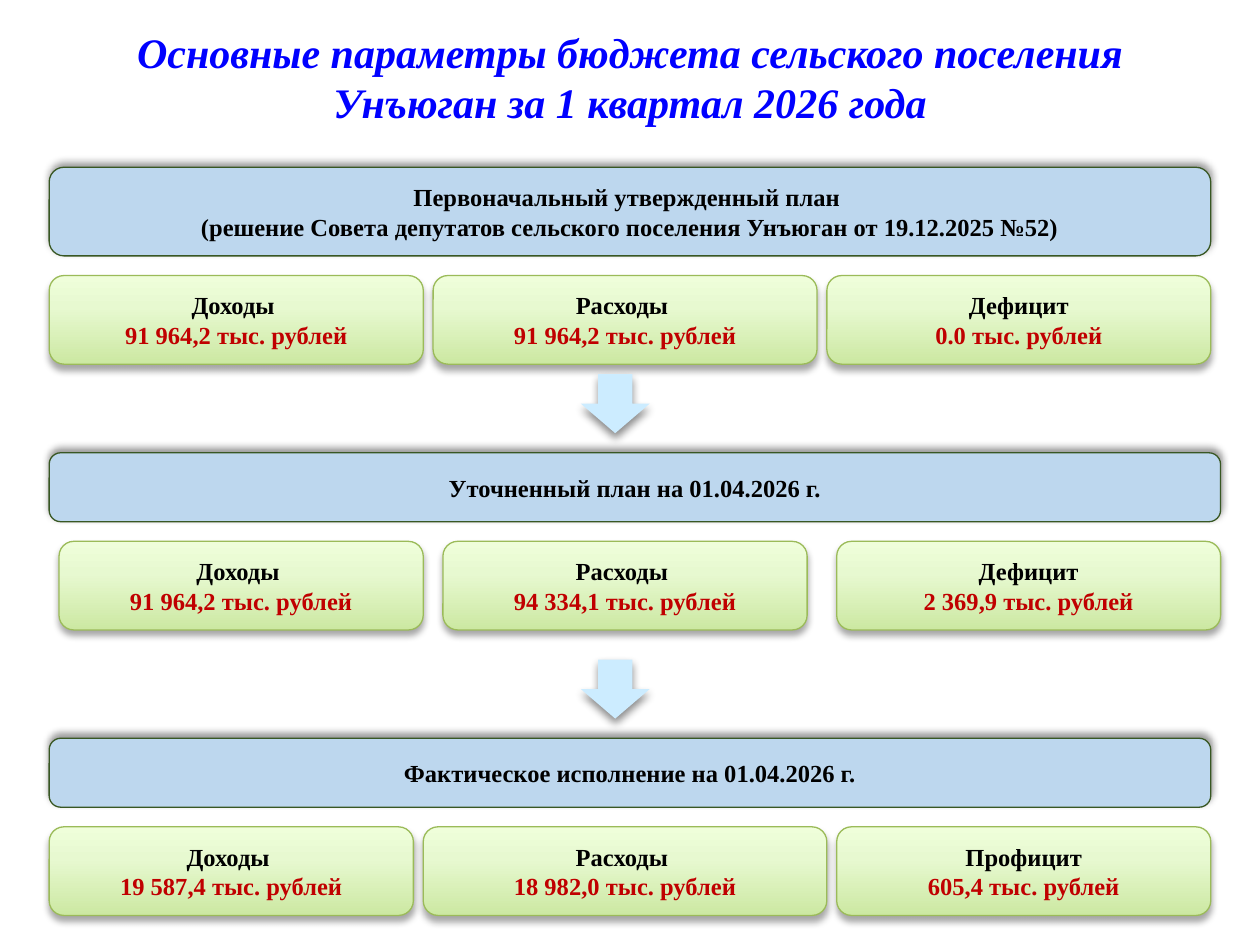
"""Build the slide with the main budget parameters of the settlement."""
from typing import NamedTuple

from lxml import etree
from pptx import Presentation
from pptx import util as u
from pptx.dml.color import RGBColor
from pptx.enum import shapes, text
from pptx.oxml import ns

FONT = "Times New Roman"
BLACK = RGBColor(0x00, 0x00, 0x00)
TITLE_BLUE = RGBColor(0x00, 0x00, 0xFF)
AMOUNT_RED = RGBColor(0xC0, 0x00, 0x00)
HEADER_FILL = RGBColor(0xBD, 0xD7, 0xEE)
HEADER_LINE = RGBColor(0x38, 0x57, 0x23)
CARD_LINE = RGBColor(0x9B, 0xBB, 0x59)
ARROW_FILL = RGBColor(0xCC, 0xEC, 0xFF)
CARD_STOPS = (
    (0, RGBColor(0xCC, 0xE8, 0xA2)),
    (64, RGBColor(0xE7, 0xF9, 0xD0)),
    (100, RGBColor(0xEF, 0xFE, 0xDA)),
)

WIDTH, HEIGHT = u.Inches(10), u.Inches(7.5)
COLUMNS, ROWS = 128, 96
CARD_ROWS = 9


class Area(NamedTuple):
    column: float
    row: float
    columns: float
    rows: float

    def lengths(self) -> tuple:
        cell_width, cell_height = WIDTH / COLUMNS, HEIGHT / ROWS
        return (
            u.Emu(round(self.column * cell_width)),
            u.Emu(round(self.row * cell_height)),
            u.Emu(round(self.columns * cell_width)),
            u.Emu(round(self.rows * cell_height)),
        )


class Shadow(NamedTuple):
    alpha: int
    blur: float
    distance: float
    direction: int


class Card(NamedTuple):
    column: int
    columns: int
    label: str
    amount: str


class Stage(NamedTuple):
    header: Area
    lines: tuple
    card_row: int
    cards: tuple


HEADER_SHADOW = Shadow(40, 4, 3, 270)
CARD_SHADOW = Shadow(35, 4, 3, 90)
ARROW_SHADOW = Shadow(45, 5, 3, 90)
TITLE_SHADOW = Shadow(43, 3, 3, 45)

TITLE = "Основные параметры бюджета сельского поселения Унъюган за 1 квартал 2026 года"
TITLE_AREA = Area(5, 2, 118, 13.3)
ARROWS = (Area(59, 38, 7, 6), Area(59, 67, 7, 6))
STAGES = (
    Stage(
        Area(5, 17, 118, 9),
        (
            "Первоначальный утвержденный план ",
            "(решение Совета депутатов сельского поселения Унъюган от 19.12.2025 №52)",
        ),
        28,
        (
            Card(5, 38, "Доходы ", "91 964,2 тыс. рублей"),
            Card(44, 39, "Расходы ", "91 964,2 тыс. рублей"),
            Card(84, 39, "Дефицит", "0.0 тыс. рублей"),
        ),
    ),
    Stage(
        Area(5, 46, 119, 7),
        ("Уточненный план на 01.04.2026 г.",),
        55,
        (
            Card(6, 37, "Доходы ", "91 964,2 тыс. рублей"),
            Card(45, 37, "Расходы ", "94 334,1 тыс. рублей"),
            Card(85, 39, "Дефицит", "2 369,9 тыс. рублей"),
        ),
    ),
    Stage(
        Area(5, 75, 118, 7),
        ("Фактическое исполнение на 01.04.2026 г.",),
        84,
        (
            Card(5, 37, "Доходы ", "19 587,4 тыс. рублей"),
            Card(43, 41, "Расходы ", "18 982,0 тыс. рублей"),
            Card(85, 38, "Профицит", "605,4 тыс. рублей"),
        ),
    ),
)


def add_element(parent, tag: str, **attributes):
    values = {name: str(value) for name, value in attributes.items()}
    return etree.SubElement(parent, ns.qn(tag), values)


def add_color(parent, color: RGBColor):
    return add_element(parent, "a:srgbClr", val=color)


def add_shadow(effects, shadow: Shadow) -> None:
    outer = add_element(
        effects,
        "a:outerShdw",
        blurRad=u.Pt(shadow.blur),
        dist=u.Pt(shadow.distance),
        dir=shadow.direction * 60000,
        algn="tl",
        rotWithShape=0,
    )
    add_element(add_color(outer, BLACK), "a:alpha", val=shadow.alpha * 1000)


def style_font(font, size: float, color: RGBColor) -> None:
    font.name, font.size, font.bold = FONT, u.Pt(size), True
    font.color.rgb = color


def add_block(slide, kind, area: Area, shadow: Shadow):
    shape = slide.shapes.add_shape(kind, *area.lengths())
    shape.shadow.inherit = False
    add_shadow(shape.element.spPr.find(ns.qn("a:effectLst")), shadow)
    return shape


def add_panel(slide, area: Area, shadow: Shadow, line: RGBColor, lines: list):
    shape = add_block(slide, shapes.MSO_SHAPE.ROUNDED_RECTANGLE, area, shadow)
    shape.line.color.rgb = line
    shape.line.width = u.Pt(0.75)
    frame = shape.text_frame
    frame.vertical_anchor = text.MSO_ANCHOR.MIDDLE
    for index, (words, color) in enumerate(lines):
        paragraph = frame.add_paragraph() if index else frame.paragraphs[0]
        paragraph.text = words
        paragraph.alignment = text.PP_ALIGN.CENTER
        style_font(paragraph.font, 14, color)
    return shape


def fill_card(shape) -> None:
    shape.fill.gradient()
    shape.fill.gradient_angle = 90
    stops = shape.element.spPr.find(ns.qn("a:gradFill")).find(ns.qn("a:gsLst"))
    for stop in list(stops):
        stops.remove(stop)
    for position, color in CARD_STOPS:
        add_color(add_element(stops, "a:gs", pos=position * 1000), color)


def add_stage(slide, stage: Stage) -> None:
    lines = [(words, BLACK) for words in stage.lines]
    header = add_panel(slide, stage.header, HEADER_SHADOW, HEADER_LINE, lines)
    header.fill.solid()
    header.fill.fore_color.rgb = HEADER_FILL
    for card in stage.cards:
        area = Area(card.column, stage.card_row, card.columns, CARD_ROWS)
        lines = [(card.label, BLACK), (card.amount, AMOUNT_RED)]
        fill_card(add_panel(slide, area, CARD_SHADOW, CARD_LINE, lines))


def add_arrow(slide, area: Area) -> None:
    arrow = add_block(slide, shapes.MSO_SHAPE.DOWN_ARROW, area, ARROW_SHADOW)
    arrow.fill.solid()
    arrow.fill.fore_color.rgb = ARROW_FILL
    arrow.line.fill.background()


def format_title(title) -> None:
    title.left, title.top, title.width, title.height = TITLE_AREA.lengths()
    frame = title.text_frame
    frame.text = TITLE
    frame.word_wrap = True
    frame.auto_size = text.MSO_AUTO_SIZE.NONE
    frame.vertical_anchor = text.MSO_ANCHOR.TOP
    paragraph = frame.paragraphs[0]
    paragraph.alignment = text.PP_ALIGN.CENTER
    font = paragraph.runs[0].font
    style_font(font, 24, TITLE_BLUE)
    font.italic = True
    properties = paragraph.runs[0]._r.get_or_add_rPr()
    effects = etree.Element(ns.qn("a:effectLst"))
    properties.find(ns.qn("a:solidFill")).addnext(effects)
    add_shadow(effects, TITLE_SHADOW)


def main() -> None:
    presentation = Presentation()
    presentation.slide_width, presentation.slide_height = WIDTH, HEIGHT
    slide = presentation.slides.add_slide(presentation.slide_layouts[5])
    format_title(slide.shapes.title)
    for stage in STAGES:
        add_stage(slide, stage)
    for area in ARROWS:
        add_arrow(slide, area)
    presentation.save("out.pptx")


if __name__ == "__main__":
    main()
